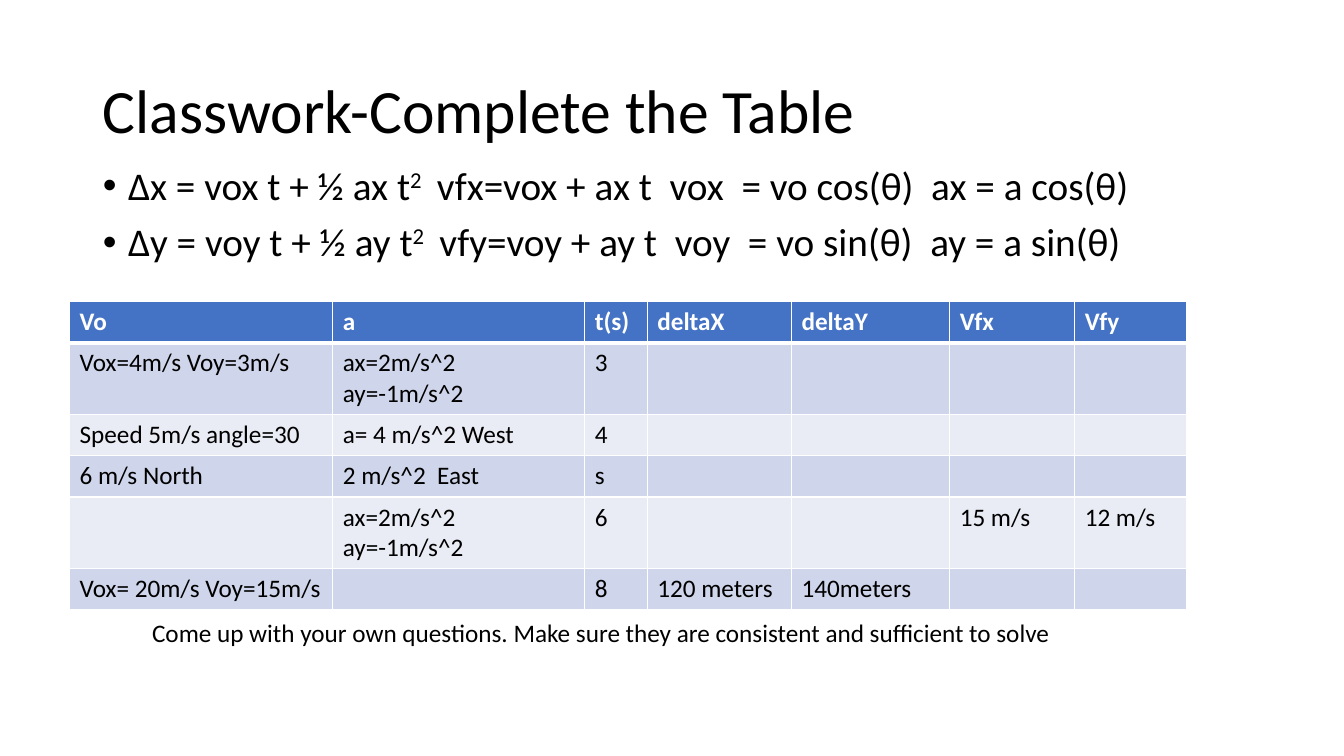
import pptx
import pptx.util
import pptx.dml.color
import pptx.enum.text
import pptx.oxml
import pptx.oxml.ns
from pptx.util import Inches

TITLE = "Classwork-Complete the Table"
FORMULAS = [
    ("Δx = vox t + ½ ax t", "2", "vfx=vox + ax t  vox  = vo cos(θ)  ax = a cos(θ)"),
    ("Δy = voy t + ½ ay t", "2", "vfy=voy + ay t  voy  = vo sin(θ)  ay = a sin(θ)"),
]
ROWS = [
    ("Vo", "a", "t(s)", "deltaX", "deltaY", "Vfx", "Vfy"),
    ("Vox=4m/s Voy=3m/s", "ax=2m/s^2 ay=-1m/s^2", "3", "", "", "", ""),
    ("Speed 5m/s angle=30", "a= 4 m/s^2 West", "4", "", "", "", ""),
    ("6 m/s North", "2 m/s^2  East", "s", "", "", "", ""),
    ("", "ax=2m/s^2  ay=-1m/s^2", "6", "", "", "15 m/s", "12 m/s"),
    ("Vox= 20m/s Voy=15m/s", "", "8", "120 meters", "140meters", "", ""),
]
COLUMN_WIDTHS = (2.61, 2.5, 0.62, 1.43, 1.57, 1.24, 1.11)
ROW_HEIGHT = 0.41
CLOSING = "Come up with your own questions. Make sure they are consistent and sufficient to solve"

THEME = {
    "font": "Calibri", "ink": "000000", "paper": "FFFFFF",
    "header": "4472C4", "bands": ("CFD5EA", "E9EBF5"),
    "title": 44, "formula": 28, "text": 18,
}


def rgb(value):
    return pptx.dml.color.RGBColor.from_string(value)


def add_text(p, text, size=THEME["text"], color=THEME["ink"], bold=False, raised=False):
    r = p.add_run()
    r.text = text
    r.font.name = THEME["font"]
    r.font.size = pptx.util.Pt(size)
    r.font.bold = bold
    r.font.color.rgb = rgb(color)
    if raised:
        r.font._element.set("baseline", "30000")


def place(sp, left, top, width, height):
    sp.left, sp.top = Inches(left), Inches(top)
    sp.width, sp.height = Inches(width), Inches(height)
    sp.text_frame.word_wrap = True
    return sp.text_frame


def set_borders(cell, bottom, top):
    tcPr = cell._tc.get_or_add_tcPr()
    widths = {"lnL": 1, "lnR": 1, "lnT": top, "lnB": bottom}
    for i, (side, width) in enumerate(widths.items()):
        ln = pptx.oxml.parse_xml(
            f'<a:{side} {pptx.oxml.ns.nsdecls("a")} w="{pptx.util.Pt(width)}"><a:solidFill>'
            f'<a:srgbClr val="{THEME["paper"]}"/></a:solidFill></a:{side}>')
        tcPr.insert(i, ln)


def add_title(s):
    tf = place(s.shapes.title, 0.92, 0.4, 11.5, 1.45)
    tf.auto_size = pptx.enum.text.MSO_AUTO_SIZE.NONE
    tf.vertical_anchor = pptx.enum.text.MSO_ANCHOR.MIDDLE
    p = tf.paragraphs[0]
    p.alignment = pptx.enum.text.PP_ALIGN.LEFT
    p.line_spacing = 0.9
    add_text(p, TITLE, size=THEME["title"])


def add_formulas(s):
    tf = place(s.placeholders[1], 0.92, 1.6, 11.5, 1.49)
    tf.auto_size = pptx.enum.text.MSO_AUTO_SIZE.NONE
    for i, (start, power, rest) in enumerate(FORMULAS):
        p = tf.add_paragraph() if i else tf.paragraphs[0]
        p.line_spacing = 0.9
        p.space_before = pptx.util.Pt(10)
        pPr = p._p.get_or_add_pPr()
        pPr.set("marL", str(Inches(0.25)))
        pPr.set("indent", str(-Inches(0.25)))
        add_text(p, start, size=THEME["formula"])
        add_text(p, power + "   ", size=THEME["formula"], raised=True)
        add_text(p, rest, size=THEME["formula"])


def add_motion_table(s):
    table = s.shapes.add_table(
        len(ROWS), len(COLUMN_WIDTHS), Inches(0.69), Inches(2.99),
        Inches(sum(COLUMN_WIDTHS)), Inches(ROW_HEIGHT * len(ROWS))).table
    for column, width in zip(table.columns, COLUMN_WIDTHS):
        column.width = Inches(width)
    for i, values in enumerate(ROWS):
        table.rows[i].height = Inches(ROW_HEIGHT)
        header = i == 0
        fill = THEME["header"] if header else THEME["bands"][(i - 1) % 2]
        color = THEME["paper"] if header else THEME["ink"]
        for j, value in enumerate(values):
            cell = table.cell(i, j)
            cell.fill.solid()
            cell.fill.fore_color.rgb = rgb(fill)
            set_borders(cell, bottom=3 if header else 1, top=3 if i == 1 else 1)
            if value:
                add_text(cell.text_frame.paragraphs[0], value, color=color, bold=header)


def main():
    prs = pptx.Presentation()
    prs.slide_width, prs.slide_height = Inches(13.33), Inches(7.5)
    s = prs.slides.add_slide(prs.slide_layouts[1])
    add_title(s)
    add_formulas(s)
    add_motion_table(s)
    tf = place(s.shapes.add_textbox(0, 0, 0, 0), 1.41, 6.08, 9.88, 0.4)
    add_text(tf.paragraphs[0], CLOSING)
    prs.save("out.pptx")


if __name__ == "__main__":
    main()
